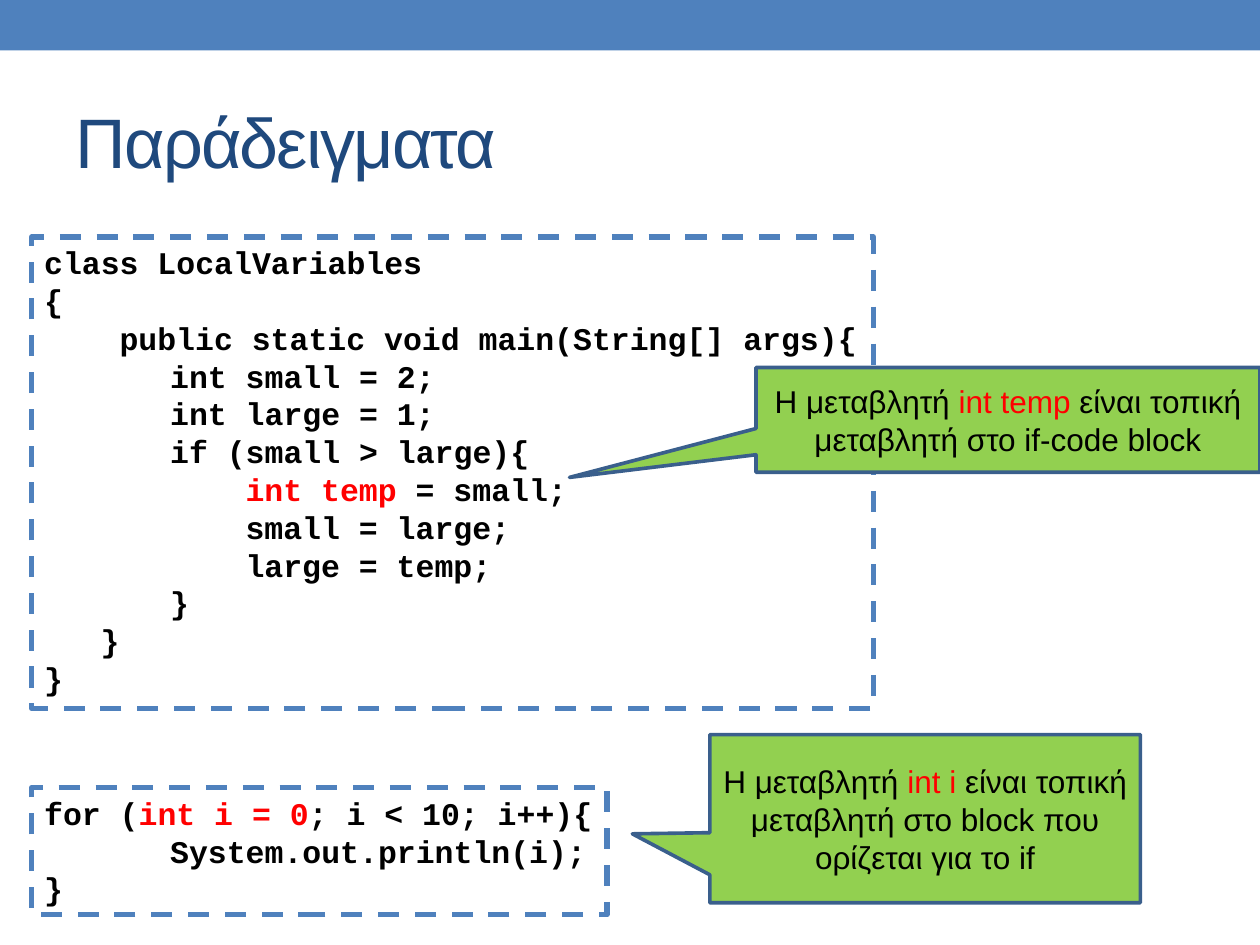
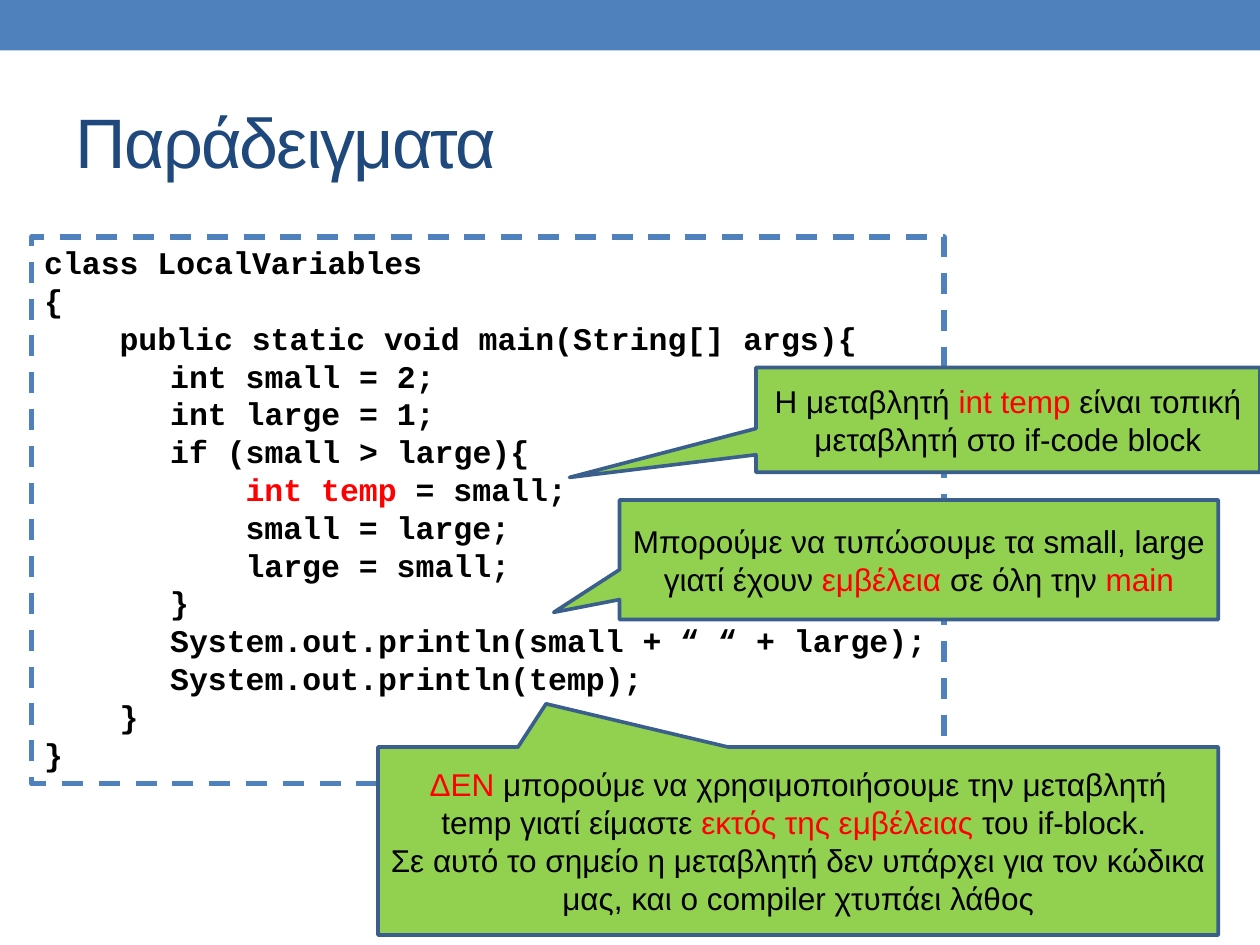
from pptx import Presentation
from pptx.dml.color import RGBColor
from pptx.enum.dml import MSO_LINE
from pptx.enum.shapes import MSO_SHAPE
from pptx.enum.text import MSO_ANCHOR, MSO_AUTO_SIZE, PP_ALIGN
from pptx.util import Cm, Pt

BLUE = RGBColor(0x4F, 0x81, 0xBD)
NAVY = RGBColor(0x1F, 0x49, 0x7D)
EDGE = RGBColor(0x3A, 0x5F, 0x8C)
GREEN = RGBColor(0x92, 0xD0, 0x50)
RED = RGBColor(0xFF, 0, 0)
BLACK = RGBColor(0, 0, 0)

CODE_LEFT, CODE_TOP = 0.64, 4.78
METHOD, BODY, BLOCK = 1.52, 2.54, 4.06

CLASS_START = [
    (0, "class LocalVariables"),
    (0, "{"),
    (METHOD, "public static void main(String[] args){"),
    (BODY, "int small = 2;"),
    (BODY, "int large = 1;"),
    (BODY, "if (small > large){"),
    (BLOCK, "*int temp *= small;"),
    (BLOCK, "small = large;"),
]
SWAP_CODE = CLASS_START + [
    (BLOCK, "large = temp;"),
    (BODY, "}"),
    (1.14, "}"),
    (0, "}"),
]
PRINT_CODE = CLASS_START + [
    (BLOCK, "large = small;"),
    (BODY, "}"),
    (BODY, "System.out.println(small + “ “ + large);"),
    (BODY, "System.out.println(temp);"),
    (METHOD, "}"),
    (0, "}"),
]
LOOP_CODE = [
    (0, "for (*int i = 0*; i < 10; i++){"),
    (BODY, "System.out.println(i);"),
    (0, "}"),
]


def add_marked_runs(p, text, font, bold=False):
    """Fill a paragraph, turning the parts between asterisks red."""
    p.font.name, p.font.size, p.font.bold = font, Pt(18), bold
    for i, part in enumerate(text.split("*")):
        if part:
            r = p.add_run()
            r.text = part
            r.font.color.rgb = RED if i % 2 else BLACK


def paragraphs(tf, count):
    """Return the first paragraph of a frame and as many new ones as needed."""
    return [tf.paragraphs[0]] + [tf.add_paragraph() for _ in range(count - 1)]


def add_titled_slide(prs, title):
    """Add a slide with the top band and a left-aligned title."""
    s = prs.slides.add_slide(prs.slide_layouts[5])
    band = s.shapes.add_shape(MSO_SHAPE.RECTANGLE, 0, 0, prs.slide_width, Cm(1.02))
    band.shadow.inherit = False
    band.fill.solid()
    band.fill.fore_color.rgb = BLUE
    band.line.fill.background()

    sp = s.shapes.title
    sp.left, sp.top, sp.width, sp.height = Cm(1.27), Cm(1.47), Cm(22.86), Cm(2.74)
    tf = sp.text_frame
    tf.text = title
    tf.auto_size = MSO_AUTO_SIZE.NONE
    tf.vertical_anchor = MSO_ANCHOR.MIDDLE
    p = tf.paragraphs[0]
    p.alignment = PP_ALIGN.LEFT
    p.font.name, p.font.size = "Arial", Pt(40)
    p.font.color.rgb = NAVY
    p.runs[0]._r.get_or_add_rPr().set("spc", "-100")
    return s


def add_code(s, top, width, height, lines):
    """Add a dashed box of code lines, each given as (indent, text)."""
    sp = s.shapes.add_textbox(Cm(CODE_LEFT), Cm(top), Cm(width), Cm(height))
    sp.line.color.rgb = BLUE
    sp.line.width = Pt(3)
    sp.line.dash_style = MSO_LINE.DASH
    tf = sp.text_frame
    tf.word_wrap = False
    tf.auto_size = MSO_AUTO_SIZE.SHAPE_TO_FIT_TEXT
    for p, (indent, text) in zip(paragraphs(tf, len(lines)), lines):
        if indent:
            p._p.get_or_add_pPr().set("marL", str(Cm(indent)))
        add_marked_runs(p, text, "Courier New", bold=True)


def add_callout(s, left, top, width, height, tip, *texts):
    """Add a green callout whose tip is a fraction of its size from the centre."""
    sp = s.shapes.add_shape(MSO_SHAPE.RECTANGULAR_CALLOUT,
                            Cm(left), Cm(top), Cm(width), Cm(height))
    sp.adjustments[0], sp.adjustments[1] = tip
    sp.shadow.inherit = False
    sp.fill.solid()
    sp.fill.fore_color.rgb = GREEN
    sp.line.color.rgb = EDGE
    sp.line.width = Pt(2.08)
    tf = sp.text_frame
    tf.word_wrap = True
    tf.vertical_anchor = MSO_ANCHOR.MIDDLE
    for p, text in zip(paragraphs(tf, len(texts)), texts):
        p.alignment = PP_ALIGN.CENTER
        add_marked_runs(p, text, "Arial")


def add_temp_callout(s):
    """Add the note on the scope of temp."""
    add_callout(s, 15.24, 7.41, 10.16, 2.11, (-0.87, 0.55),
                "Η μεταβλητή *int temp *είναι τοπική μεταβλητή στο if-code block")


def main():
    """Build the two slides on local variables."""
    prs = Presentation()
    prs.slide_width, prs.slide_height = Cm(25.4), Cm(19.05)

    s = add_titled_slide(prs, "Παράδειγματα")
    add_code(s, 15.88, 11.6, 2.56, LOOP_CODE)
    add_callout(s, 14.31, 14.81, 8.68, 3.39, (-0.68, 0.09),
                "Η μεταβλητή *int i *είναι τοπική μεταβλητή στο block που ορίζεται για το if")
    add_code(s, CODE_TOP, 16.97, 9.5, SWAP_CODE)
    add_temp_callout(s)

    s = add_titled_slide(prs, "Παράδειγματα")
    add_code(s, CODE_TOP, 18.39, 11.02, PRINT_CODE)
    add_temp_callout(s)
    add_callout(s, 12.49, 10.08, 12.07, 2.41, (-0.61, 0.44),
                "Μπορούμε να τυπώσουμε τα small, large γιατί έχουν "
                "*εμβέλεια* σε όλη την *main*")
    add_callout(s, 7.62, 15.06, 16.94, 3.79, (-0.3, -0.73),
                "*ΔΕΝ* μπορούμε να χρησιμοποιήσουμε την μεταβλητή temp "
                "γιατί είμαστε *εκτός της εμβέλειας *του if-block. ",
                "Σε αυτό το σημείο η μεταβλητή δεν υπάρχει για τον κώδικα μας, "
                "και ο compiler χτυπάει λάθος")

    prs.save("out.pptx")


if __name__ == "__main__":
    main()
